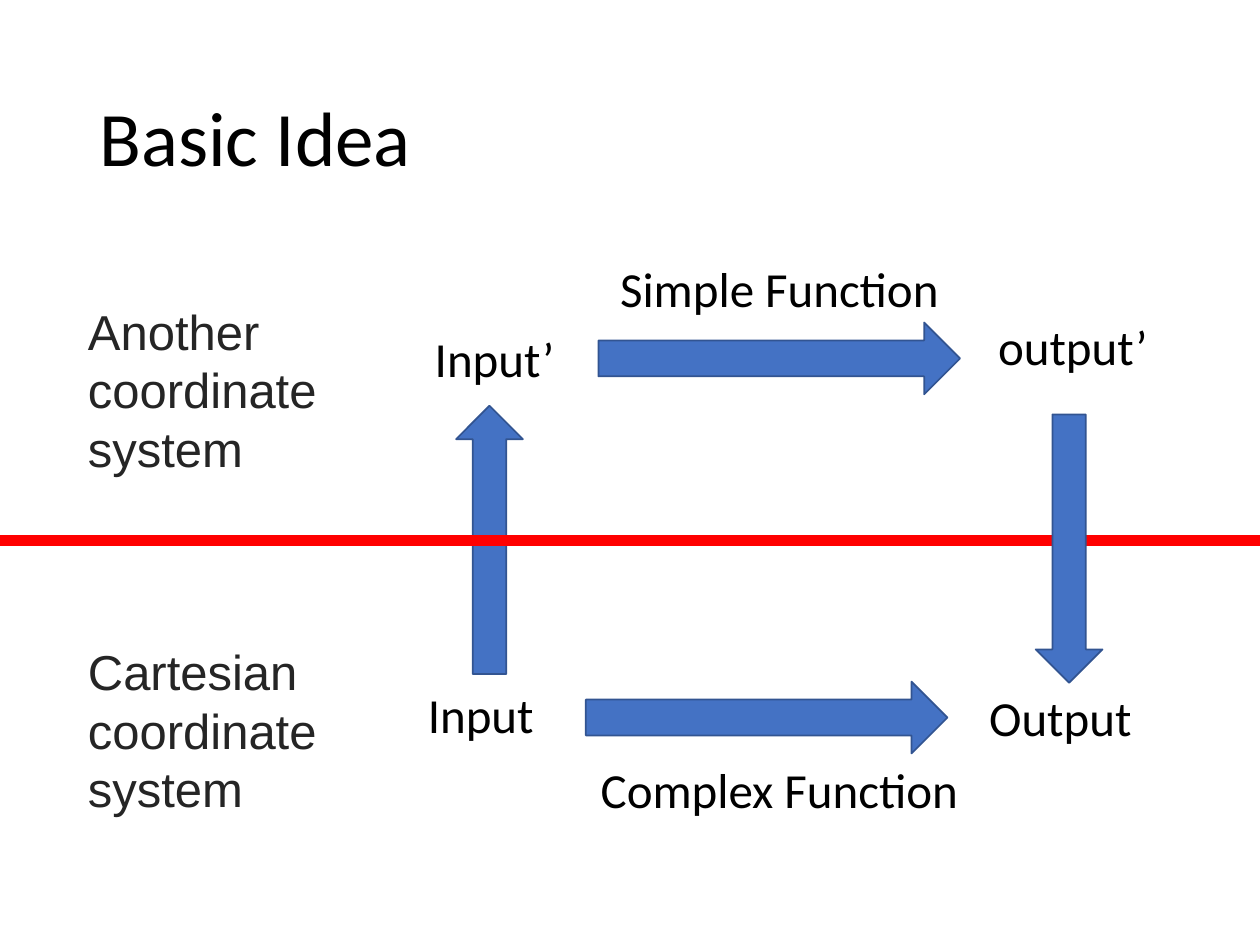
from pptx import Presentation
from pptx.dml.color import RGBColor
from pptx.enum.shapes import MSO_CONNECTOR as Connector, MSO_SHAPE as Shape
from pptx.enum.text import MSO_ANCHOR as Anchor, PP_ALIGN as Align
from pptx.oxml.ns import qn
from pptx.util import Inches, Pt
from lxml.etree import SubElement

COLORS = {"text": "000000", "system": "252525", "arrow": "4472C4",
          "outline": "325491", "divider": "FF0000"}

# Positions are left, top in percent of the slide's width and height.
TITLE = ("Basic Idea", (6.9, 5.33))
CARTESIAN = {
    "system": ("Cartesian coordinate system", (6, 67.2)),
    "function": ("Complex Function", (45, 79.73)),
    "values": [("Input", (29.2, 71.73)), ("Output", (75.2, 72.13))],
    "arrow": (46.5, 72.13),
}
ANOTHER = {
    "system": ("Another coordinate system", (6, 31.2)),
    "function": ("Simple Function", (45, 26.67)),
    "values": [("Input’", (30.3, 34.13)), ("output’", (76.2, 32.8))],
    "arrow": (47.5, 34.13),
}
UP_ARROW, DOWN_ARROW = (28.2, 53.6), (74.2, 54.53)
DIVIDER_TOP = 57.2

# Sizes are width, height in the same percentages.
SIZES = {"title": (86.2, 19.33), "system": (21.6, 20.13),
         "function": (33.7, 7.6), "value": (17.9, 7.6),
         "function arrow": (28.7, 7.6), "crossing arrow": (21.3, 7.07)}

presentation = Presentation()
presentation.slide_width, presentation.slide_height = Inches(10), Inches(7.5)
slide = presentation.slides.add_slide(presentation.slide_layouts[6])


def across(share):
    return round(presentation.slide_width * share / 100)


def down(share):
    return round(presentation.slide_height * share / 100)


def box(position, size):
    """Turn percentages into left, top, width and height."""
    return (across(position[0]), down(position[1]),
            across(size[0]), down(size[1]))


def add_text(text, position, size, font="Calibri", points=28, color="text",
             align=Align.CENTER, anchor=Anchor.TOP, spacing=None):
    frame = slide.shapes.add_textbox(*box(position, size)).text_frame
    frame.word_wrap = True
    frame.vertical_anchor = anchor
    paragraph = frame.paragraphs[0]
    paragraph.alignment = align
    paragraph.line_spacing = spacing
    run = paragraph.add_run()
    run.text = text
    run.font.name = font
    run.font.size = Pt(points)
    run.font.color.rgb = RGBColor.from_string(COLORS[color])


def add_arrow(position, size, rotation=0):
    arrow = slide.shapes.add_shape(Shape.RIGHT_ARROW, *box(position, size))
    arrow.rotation = rotation
    arrow.shadow.inherit = False
    arrow.fill.solid()
    arrow.fill.fore_color.rgb = RGBColor.from_string(COLORS["arrow"])
    arrow.line.color.rgb = RGBColor.from_string(COLORS["outline"])
    arrow.line.width = Pt(1)


def add_divider(top):
    line = slide.shapes.add_connector(
        Connector.STRAIGHT, 0, down(top), across(100), down(top))
    line.line.color.rgb = RGBColor.from_string(COLORS["divider"])
    line.line.width = Pt(6)
    SubElement(line.element.spPr, qn("a:effectLst"))


def add_half(half):
    """Draw one coordinate system with its function and values."""
    add_text(*half["system"], SIZES["system"], font="Arial", color="system",
             align=Align.LEFT)
    add_text(*half["function"], SIZES["function"])
    for text, position in half["values"]:
        add_text(text, position, SIZES["value"])
    add_arrow(half["arrow"], SIZES["function arrow"])


add_text(*TITLE, SIZES["title"], points=44, align=Align.LEFT,
         anchor=Anchor.MIDDLE, spacing=0.9)
add_half(CARTESIAN)
add_arrow(UP_ARROW, SIZES["crossing arrow"], rotation=270)
add_divider(DIVIDER_TOP)
add_half(ANOTHER)
add_arrow(DOWN_ARROW, SIZES["crossing arrow"], rotation=90)

presentation.save("out.pptx")
